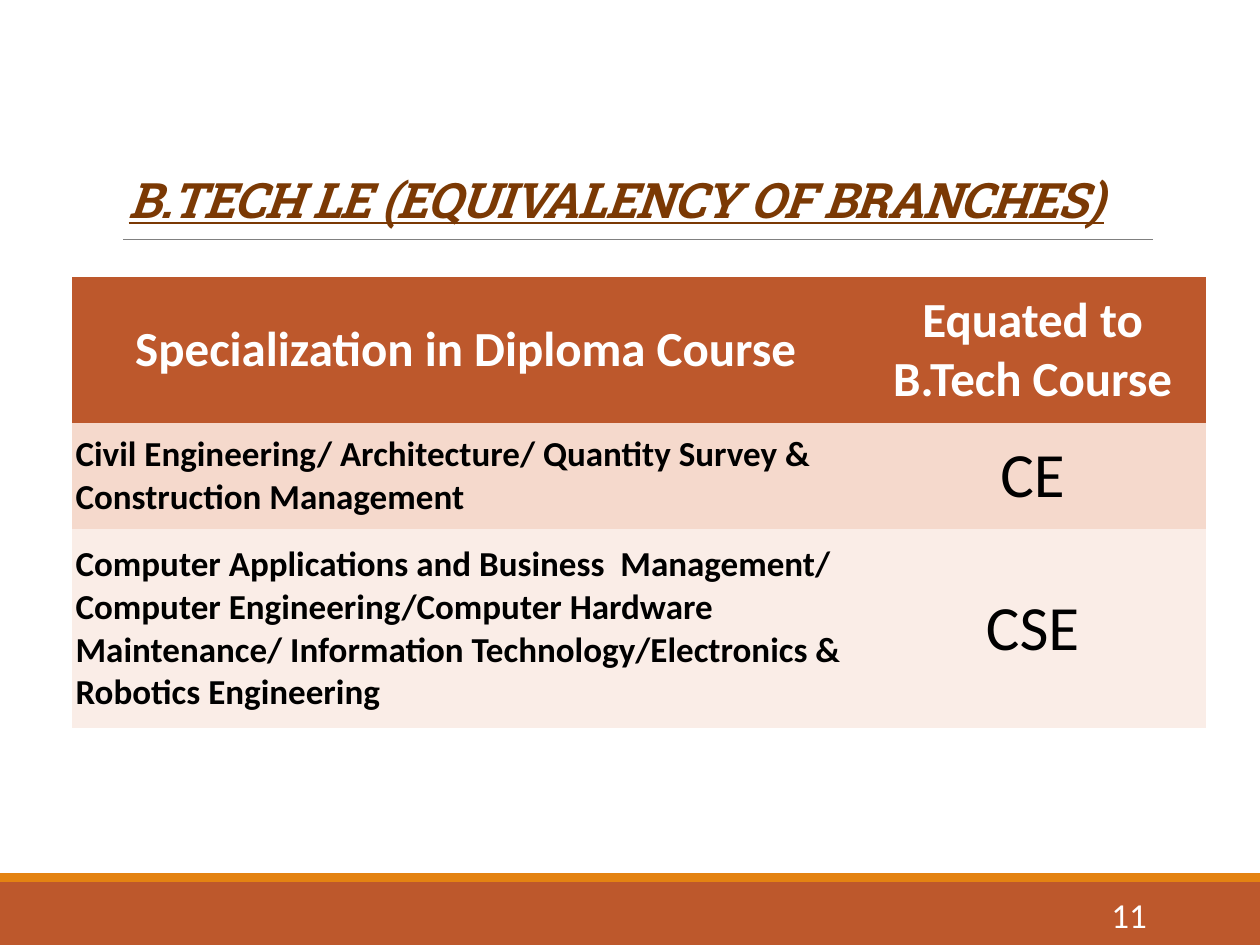
from typing import NamedTuple

from pptx import Presentation
from pptx.dml.color import RGBColor
from pptx.enum.shapes import MSO_CONNECTOR, MSO_SHAPE
from pptx.enum.text import MSO_ANCHOR, MSO_AUTO_SIZE, PP_ALIGN
from pptx.oxml.ns import qn
from pptx.util import Inches, Pt

COLORS = {
    "rust": "BD582C",
    "orange": "E48312",
    "brown": "7B3904",
    "gray": "808080",
    "white": "FFFFFF",
    "black": "000000",
    "band_dark": "F5D9CC",
    "band_light": "FAEDE7",
}


class Band(NamedTuple):
    top: float
    height: float
    color: str


class CellStyle(NamedTuple):
    size: int
    bold: bool
    color: str
    align: PP_ALIGN


class Row(NamedTuple):
    height: float
    fill: str
    texts: tuple[str, str]
    styles: tuple[CellStyle, CellStyle]


HEADER = CellStyle(28, True, "white", PP_ALIGN.CENTER)
DIPLOMA = CellStyle(20, True, "black", PP_ALIGN.LEFT)
BRANCH = CellStyle(36, False, "black", PP_ALIGN.CENTER)

FOOTER_BANDS = [Band(7, 0.5, "rust"), Band(6.93, 0.07, "orange")]
COL_WIDTHS = [6.25, 2.75]
ROWS = [
    Row(1.16, "rust",
        ("Specialization in Diploma Course", "Equated to B.Tech Course"),
        (HEADER, HEADER)),
    Row(0.84, "band_dark",
        ("Civil Engineering/ Architecture/ Quantity Survey & "
         "Construction Management", "CE"),
        (DIPLOMA, BRANCH)),
    Row(1.58, "band_light",
        ("Computer Applications and Business  Management/ "
         "Computer Engineering/Computer Hardware Maintenance/ "
         "Information Technology/Electronics & Robotics Engineering", "CSE"),
        (DIPLOMA, BRANCH)),
]


def rgb(name: str) -> RGBColor:
    return RGBColor.from_string(COLORS[name])


def set_font(font, name: str, size: float, color: str, bold: bool = False) -> None:
    font.name = name
    font.size = Pt(size)
    font.bold = bold
    font.color.rgb = rgb(color)


def place(sp, left: float, top: float, width: float, height: float) -> None:
    sp.left, sp.top = Inches(left), Inches(top)
    sp.width, sp.height = Inches(width), Inches(height)


def add_band(s, band: Band) -> None:
    sp = s.shapes.add_shape(MSO_SHAPE.RECTANGLE, 0, Inches(band.top),
                            Inches(10), Inches(band.height))
    sp.shadow.inherit = False
    sp.fill.solid()
    sp.fill.fore_color.rgb = rgb(band.color)
    sp.line.fill.background()


def add_title_rule(s) -> None:
    line = s.shapes.add_connector(MSO_CONNECTOR.STRAIGHT, Inches(0.98), Inches(1.9),
                                  Inches(9.15), Inches(1.9))
    line.line.color.rgb = rgb("gray")
    line.line.width = Pt(0.5)
    sp_pr = line._element.spPr
    sp_pr.append(sp_pr.makeelement(qn("a:effectLst"), {}))


def format_title(s) -> None:
    title = s.shapes.title
    place(title, 0.92, 1.42, 8.67, 0.78)
    tf = title.text_frame
    tf.auto_size = MSO_AUTO_SIZE.NONE
    tf.word_wrap = True
    tf.vertical_anchor = MSO_ANCHOR.BOTTOM
    tf.margin_top, tf.margin_bottom = 0, Inches(0.39)
    p = tf.paragraphs[0]
    p.alignment = PP_ALIGN.LEFT
    p.line_spacing = 0.85
    r = p.add_run()
    r.text = "B.TECH LE (EQUIVALENCY OF BRANCHES)"
    set_font(r.font, "Roboto Slab", 27.9, "brown", bold=True)
    r.font.italic = r.font.underline = True
    r._r.get_or_add_rPr().set("spc", "-50")


def fill_cell(cell, text: str, style: CellStyle, fill: str) -> None:
    cell.fill.solid()
    cell.fill.fore_color.rgb = rgb(fill)
    cell.vertical_anchor = MSO_ANCHOR.MIDDLE
    cell.margin_left = cell.margin_right = Inches(0.03)
    cell.margin_top = cell.margin_bottom = 0
    p = cell.text_frame.paragraphs[0]
    p.text = text
    p.alignment = style.align
    set_font(p.font, "Calibri", style.size, style.color, style.bold)


def add_equivalency_table(s) -> None:
    table = s.shapes.add_table(
        len(ROWS), len(COL_WIDTHS), Inches(0.57), Inches(2.2),
        Inches(sum(COL_WIDTHS)), Inches(sum(row.height for row in ROWS))).table
    # The plain, grid-free table style
    table._tbl.tblPr.find(qn("a:tableStyleId")).text = (
        "{2D5ABB26-0587-4C30-8999-92F81FD0307C}")
    table.horz_banding = False
    for col, width in zip(table.columns, COL_WIDTHS):
        col.width = Inches(width)
    for i, row in enumerate(ROWS):
        table.rows[i].height = Inches(row.height)
        for j, (text, style) in enumerate(zip(row.texts, row.styles)):
            fill_cell(table.cell(i, j), text, style, row.fill)


def add_page_number(s) -> None:
    tf = s.shapes.add_textbox(Inches(8.12), Inches(7.06),
                              Inches(1.08), Inches(0.4)).text_frame
    tf.word_wrap = True
    tf.vertical_anchor = MSO_ANCHOR.MIDDLE
    p = tf.paragraphs[0]
    p.text = "11"
    p.alignment = PP_ALIGN.RIGHT
    set_font(p.font, "Calibri", 20, "white")


def main() -> None:
    prs = Presentation()
    prs.slide_width, prs.slide_height = Inches(10), Inches(7.5)
    s = prs.slides.add_slide(prs.slide_layouts[5])
    for band in FOOTER_BANDS:
        add_band(s, band)
    add_title_rule(s)
    format_title(s)
    add_equivalency_table(s)
    add_page_number(s)
    prs.save("out.pptx")


if __name__ == "__main__":
    main()
